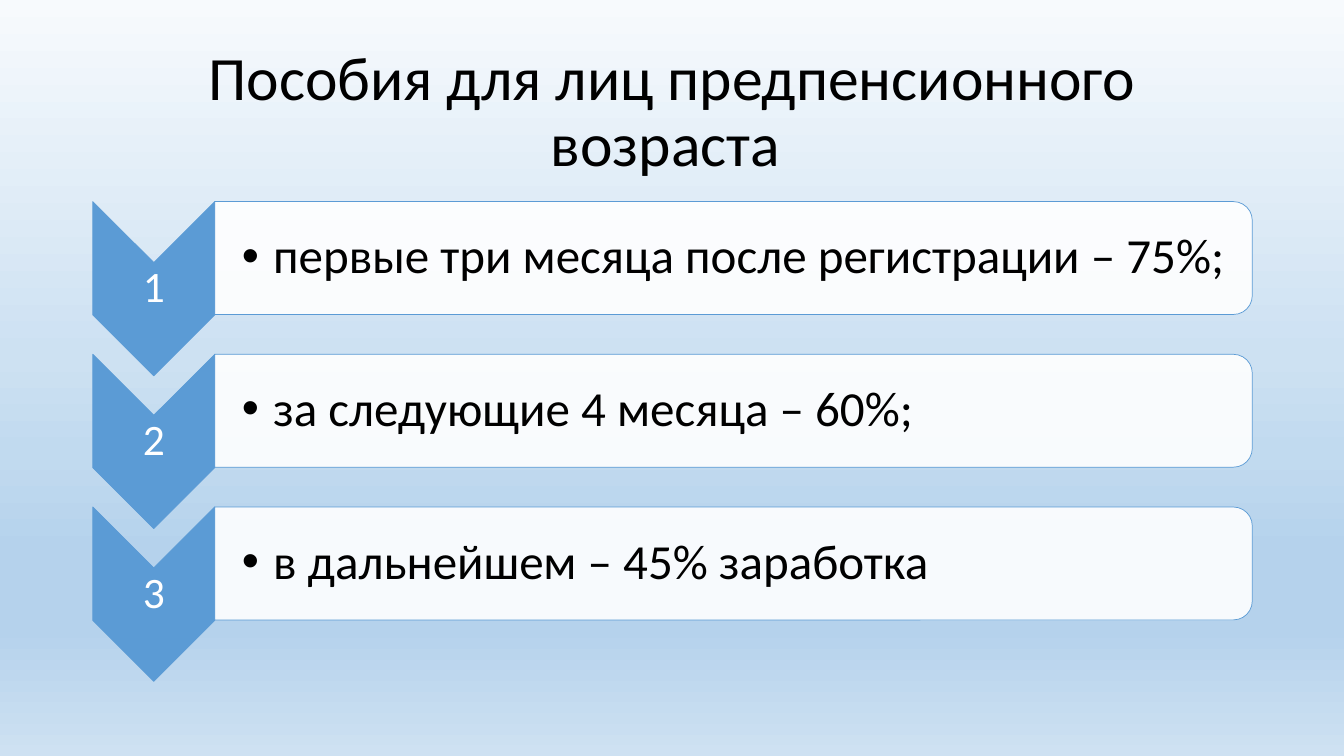
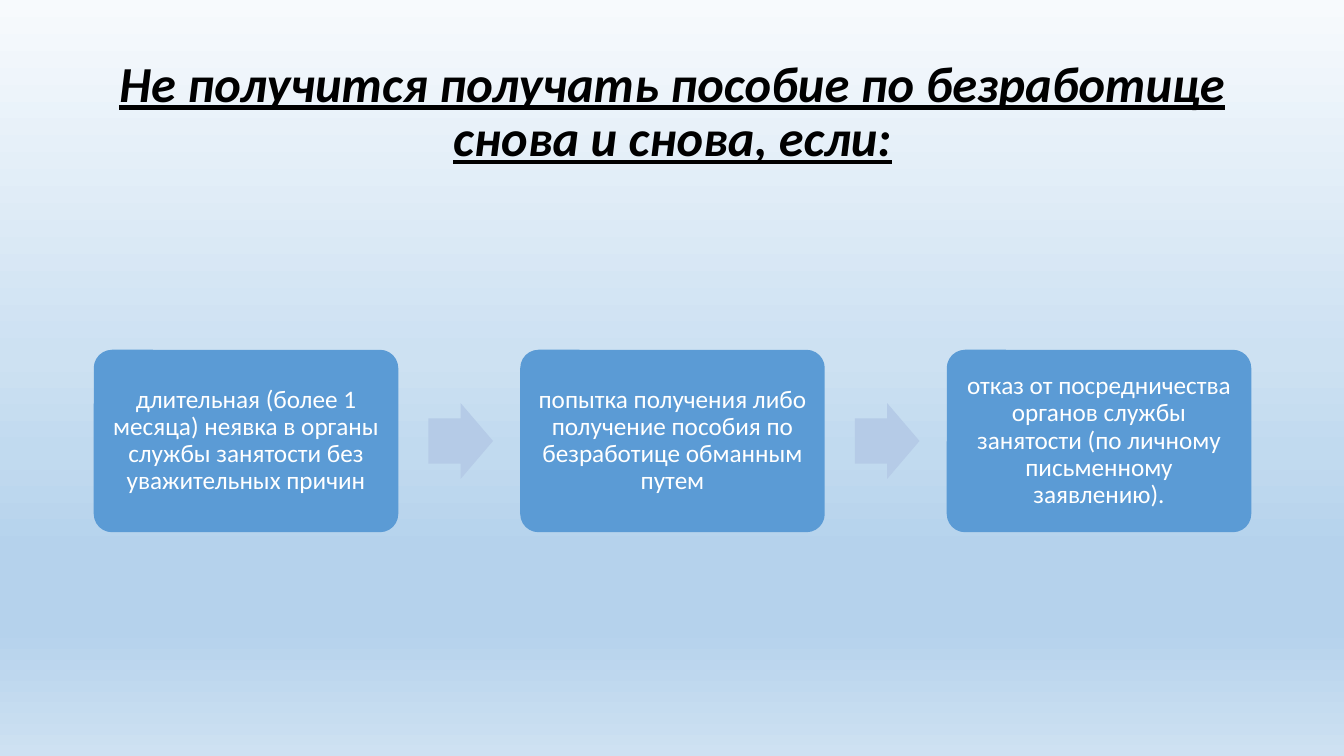
from lxml import etree
from pptx import Presentation
from pptx.dml.color import RGBColor
from pptx.enum.shapes import MSO_SHAPE
from pptx.enum.text import MSO_ANCHOR, MSO_AUTO_SIZE, PP_ALIGN
from pptx.oxml.ns import qn
from pptx.util import Inches, Pt

BLUE = RGBColor(0x5B, 0x9B, 0xD5)
PALE = RGBColor(0xB5, 0xCB, 0xE7)
WHITE = RGBColor(0xFF, 0xFF, 0xFF)
BLACK = RGBColor(0x00, 0x00, 0x00)
SKY = [(0, "F7FAFD"), (47, "CDE1F2"), (60, "C1DAEF"),
       (73, "B5D2EC"), (83, "B5D2EC"), (100, "CEE1F2")]
FONT = "Calibri"

CHEVRON = MSO_SHAPE.CHEVRON
PANEL = MSO_SHAPE.ROUND_2_SAME_RECTANGLE
CARD = MSO_SHAPE.ROUNDED_RECTANGLE
ARROW = MSO_SHAPE.RIGHT_ARROW
MIDDLE = MSO_ANCHOR.MIDDLE
NO_FIT = MSO_AUTO_SIZE.NONE
CENTER, LEFT = PP_ALIGN.CENTER, PP_ALIGN.LEFT

TITLE_BOX = (0.92, 0.4, 11.5, 1.45)
LIST_BOX = (0.92, 2, 11.5, 4.76)
FLOW_BOX = (0.93, 3.47, 11.48, 1.81)

STEPS = ["первые три месяца после регистрации – 75%;",
         "за следующие 4 месяца – 60%;",
         "в дальнейшем – 45% заработка"]
CAUSES = ["длительная (более 1 месяца) неявка в органы службы занятости без "
          "уважительных причин",
          "попытка получения либо получение пособия по безработице обманным путем",
          "отказ от посредничества органов службы занятости (по личному "
          "письменному заявлению)."]


def paint_sky(master):
    """Give the master its vertical gradient background."""
    fill = master.background.fill
    fill.gradient()
    fill.gradient_angle = 270
    stops = master.element.find(".//" + qn("p:bg")).find(".//" + qn("a:gsLst"))
    for old in list(stops):
        stops.remove(old)
    for spot, tone in SKY:
        stop = etree.SubElement(stops, qn("a:gs"), pos=str(spot * 1000))
        etree.SubElement(stop, qn("a:srgbClr"), val=tone)


def write(shape, text, size, color, align=CENTER, inset=None, **style):
    """Write one formatted paragraph into a shape."""
    frame = shape.text_frame
    frame.word_wrap = True
    frame.auto_size = NO_FIT
    frame.vertical_anchor = MIDDLE
    if inset:
        for side, gap in zip(("left", "top", "right", "bottom"), inset):
            setattr(frame, "margin_" + side, Inches(gap))
    frame.text = text
    par = frame.paragraphs[0]
    par.alignment = align
    par.line_spacing = 0.9
    font = par.runs[0].font
    font.color.rgb = color
    for name, value in {"name": FONT, "size": Pt(size), **style}.items():
        setattr(font, name, value)
    return par


def add_bullet(par, indent):
    """Hang a round bullet before a paragraph."""
    props = par._p.get_or_add_pPr()
    props.set("marL", str(Inches(indent)))
    props.set("indent", str(-Inches(indent)))
    etree.SubElement(props, qn("a:buFont"), typeface="Arial")
    etree.SubElement(props, qn("a:buChar"), char="•")


def add_form(slide, kind, box, color, edge=False, turn=False, adjust=()):
    """Add a filled shape, turned a quarter within its box if asked."""
    x, y, w, h = box
    if turn:
        x, y, w, h = x + (w - h) / 2, y + (h - w) / 2, h, w
    form = slide.shapes.add_shape(kind, *map(Inches, (x, y, w, h)))
    form.rotation = 90 if turn else 0
    form.shadow.inherit = False
    form.fill.solid()
    form.fill.fore_color.rgb = color
    if edge:
        form.line.color.rgb = BLUE
        form.line.width = Pt(0.5)
    else:
        form.line.fill.background()
    for spot, value in enumerate(adjust):
        form.adjustments[spot] = value
    return form


def add_label(slide, box, text, size, color, **style):
    """Add a text box."""
    label = slide.shapes.add_textbox(*map(Inches, box))
    return write(label, text, size, color, **style)


def add_page(deck, title, size, **style):
    """Add a slide with its title."""
    slide = deck.slides.add_slide(deck.slide_layouts[5])
    head = slide.shapes.title
    head.left, head.top, head.width, head.height = map(Inches, TITLE_BOX)
    write(head, title, size, BLACK, **style)
    return slide


def add_list(slide, box, items):
    """Stack numbered chevrons with a text panel beside each."""
    left, top, wide, high = box
    mark, tall, row = 1.21, 1.73, 1.12
    pitch = (high - tall) / (len(items) - 1)
    for spot, text in enumerate(items):
        y = top + spot * pitch
        add_form(slide, CHEVRON, (left, y, mark, tall), BLUE, edge=True, turn=True)
        add_label(slide, (left, y + mark / 2, mark, tall - mark), str(spot + 1),
                  31, WHITE, inset=(0.02,) * 4)
        side, room = left + mark, wide - mark
        panel = add_form(slide, PANEL, (side, y, room, row), WHITE,
                         edge=True, turn=True)
        tone = panel.fill._xPr.find(".//" + qn("a:srgbClr"))
        etree.SubElement(tone, qn("a:alpha"), val="90000")
        par = add_label(slide, (side, y + 0.05, room - 0.05, row - 0.1), text,
                        35, BLACK, align=LEFT, inset=(0.27, 0.02, 0.02, 0.02))
        add_bullet(par, 0.31)


def add_flow(slide, box, items):
    """Lay cards in a row with arrows between them."""
    left, top, wide, high = box
    card, tip, rise = 3.02, 0.64, 0.75
    pitch = (wide - card) / (len(items) - 1)
    for spot, text in enumerate(items):
        x = left + spot * pitch
        if spot:
            add_form(slide, ARROW, (x - 0.91, top + (high - rise) / 2, tip, rise),
                     PALE, adjust=(0.6, 0.5))
        form = add_form(slide, CARD, (x, top, card, high), BLUE, adjust=(0.1,))
        write(form, text, 18, WHITE, inset=(0.07,) * 4)


def main():
    """Build and save the deck."""
    deck = Presentation()
    deck.slide_width, deck.slide_height = Inches(13.33), Inches(7.5)
    paint_sky(deck.slide_master)
    add_list(add_page(deck, "Пособия для лиц предпенсионного возраста ", 44),
             LIST_BOX, STEPS)
    causes = add_page(
        deck, "Не получится получать пособие по безработице снова и снова, если:",
        36, bold=True, italic=True, underline=True)
    add_flow(causes, FLOW_BOX, CAUSES)
    deck.save("out.pptx")


if __name__ == "__main__":
    main()
